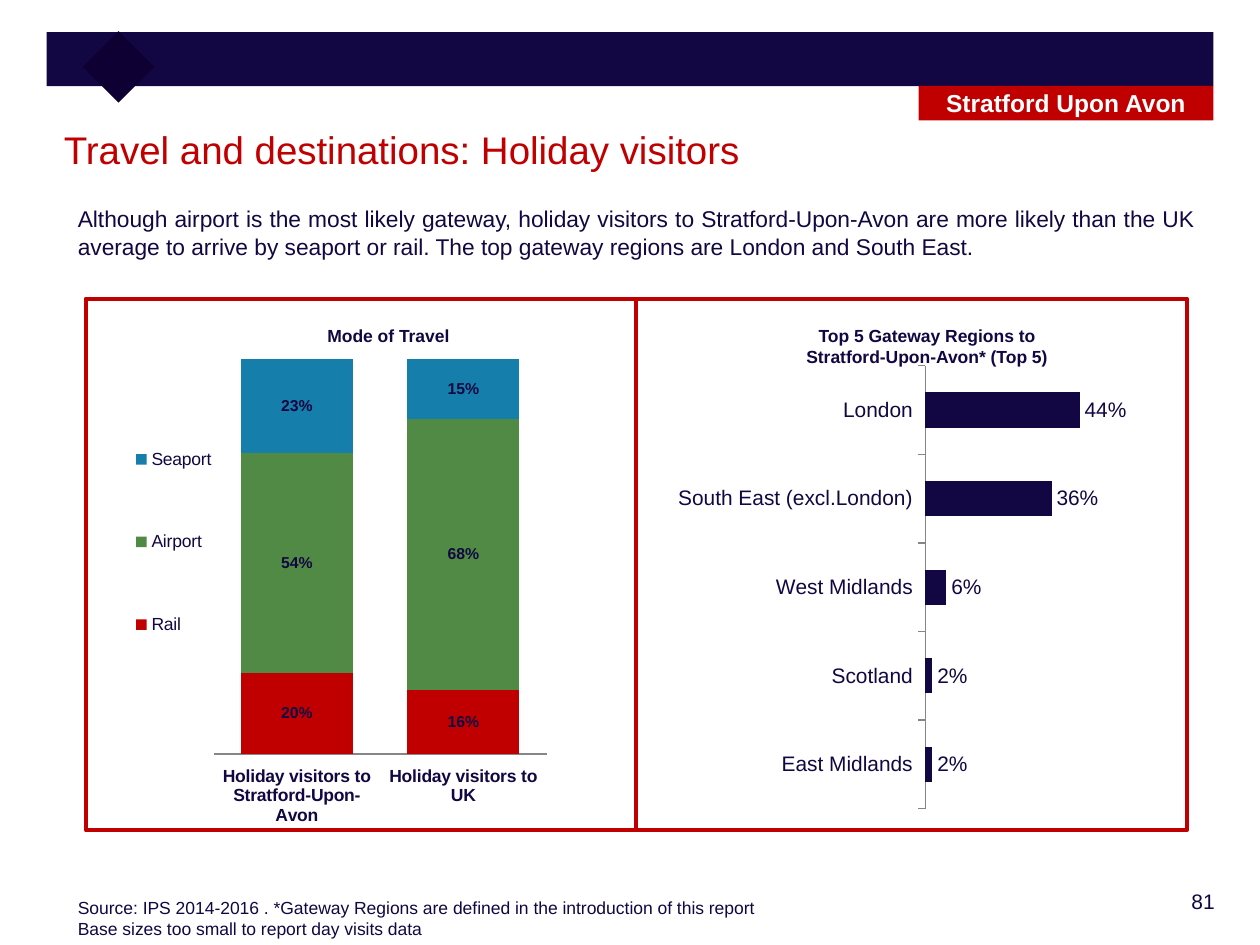
from pptx import Presentation
from pptx.chart.data import CategoryChartData
from pptx.dml.color import RGBColor
from pptx.enum.chart import XL_CHART_TYPE, XL_LEGEND_POSITION, XL_TICK_LABEL_POSITION, XL_TICK_MARK
from pptx.enum.shapes import MSO_SHAPE
from pptx.enum.text import MSO_ANCHOR, PP_ALIGN
from pptx.oxml import parse_xml
from pptx.oxml.ns import nsdecls, qn
from pptx.util import Cm, Pt

COLORS = {name: RGBColor.from_string(value) for name, value in {
    "navy": "120742", "dark": "0E0033", "red": "C00000", "green": "518A45",
    "blue": "157EAB", "gray": "868686", "white": "FFFFFF"}.items()}


def style_font(font, size, color="navy", bold=False):
    font.name, font.size, font.bold = "Arial", Pt(size), bold
    font.color.rgb = COLORS[color]


def set_layout(parent, index, x, y, w, h):
    """Place a plot area or legend by fractions of its chart."""
    for old in parent.findall(qn("c:layout")):
        parent.remove(old)
    target = '<c:layoutTarget val="inner"/>' if parent.tag == qn("c:plotArea") else ""
    parent.insert(index, parse_xml(
        f'<c:layout {nsdecls("c")}><c:manualLayout>{target}'
        '<c:xMode val="edge"/><c:yMode val="edge"/>'
        f'<c:x val="{x}"/><c:y val="{y}"/><c:w val="{w}"/><c:h val="{h}"/>'
        '</c:manualLayout></c:layout>'))


prs = Presentation()
prs.slide_width, prs.slide_height = Cm(25.4), Cm(19.05)
s = prs.slides.add_slide(prs.slide_layouts[6])

# Header band, diamond and place tag
for x, y, w, h, color, angle in [
        (0.94, 0.65, 23.52, 1.09, "navy", 0),
        (1.88, 0.84, 1.02, 1.02, "dark", 45),
        (18.52, 1.73, 5.94, 0.7, "red", 0)]:
    sp = s.shapes.add_shape(MSO_SHAPE.RECTANGLE, Cm(x), Cm(y), Cm(w), Cm(h))
    sp.shadow.inherit = False
    sp.fill.solid()
    sp.fill.fore_color.rgb = COLORS[color]
    sp.line.fill.background()
    sp.rotation = angle
tf = sp.text_frame
tf.vertical_anchor = MSO_ANCHOR.MIDDLE
p = tf.paragraphs[0]
p.text = "Stratford Upon Avon"
p.alignment = PP_ALIGN.CENTER
style_font(p.font, 14, "white", True)

# Title, body, chart headings, source and page number
left, center, right, justify = PP_ALIGN.LEFT, PP_ALIGN.CENTER, PP_ALIGN.RIGHT, PP_ALIGN.JUSTIFY
for x, y, w, h, size, color, bold, align, lines in [
        (1.04, 2.41, 23.39, 1.55, 22, "red", False, left,
         ["Travel and destinations: Holiday visitors"]),
        (1.32, 4.01, 22.99, 1.88, 13, "navy", False, justify,
         ["Although airport is the most likely gateway, holiday visitors to "
          "Stratford-Upon-Avon are more likely than the UK average to arrive by "
          "seaport or rail. The top gateway regions are London and South East."]),
        (6.35, 6.43, 3.73, 0.79, 10, "navy", True, left, ["Mode of Travel"]),
        (15.88, 6.43, 5.61, 1.17, 10, "navy", True, center,
         ["Top 5 Gateway Regions to Stratford-Upon-Avon* (Top 5)"]),
        (1.32, 17.96, 23.06, 1.09, 10, "navy", False, left,
         ["Source: IPS 2014-2016 . *Gateway Regions are defined in the introduction of this report",
          "Base sizes too small to report day visits data"]),
        (21.67, 17.78, 3.07, 0.91, 12, "navy", False, right, ["81"])]:
    tf = s.shapes.add_textbox(Cm(x), Cm(y), Cm(w), Cm(h)).text_frame
    tf.word_wrap = True
    for i, line in enumerate(lines):
        p = tf.paragraphs[0] if i == 0 else tf.add_paragraph()
        p.text = line
        p.alignment = align
        style_font(p.font, size, color, bold)

# Chart data
travel = CategoryChartData(number_format="0%")
travel.categories = ["Holiday visitors to Stratford-Upon-Avon", "Holiday visitors to UK"]
travel.add_series("Rail", (0.2, 0.16))
travel.add_series("Airport", (0.54, 0.68))
travel.add_series("Seaport", (0.23, 0.15))

gateways = CategoryChartData(number_format="0%")
gateways.categories = ["London", "South East (excl.London)", "West Midlands",
                       "Scotland", "East Midlands"]
gateways.add_series("Series 1", (0.44, 0.36, 0.06, 0.02, 0.02))

# Charts
charts = []
for kind, data, box, plot_box, gap, overlap, top, size, label_size, bold, tick, fills in [
        (XL_CHART_TYPE.COLUMN_STACKED_100, travel, (2.11, 6.68, 9.3, 10.11),
         (0.236, 0.056, 0.722, 0.787), 49, 100, 1, 10, 9, True,
         XL_TICK_MARK.NONE, ["red", "green", "blue"]),
        (XL_CHART_TYPE.BAR_CLUSTERED, gateways, (13.67, 7.21, 9.04, 9.3),
         (0.553, 0.018, 0.393, 0.96), 150, 0, 0.5, 12, 12, False,
         XL_TICK_MARK.OUTSIDE, ["navy"])]:
    chart = s.shapes.add_chart(kind, *[Cm(v) for v in box], data).chart
    charts.append(chart)
    chart.has_title = chart.has_legend = False
    style_font(chart.font, size)
    set_layout(chart.element.find(".//" + qn("c:plotArea")), 0, *plot_box)

    axis = chart.category_axis
    axis.major_tick_mark, axis.minor_tick_mark = tick, XL_TICK_MARK.NONE
    axis.tick_label_position = XL_TICK_LABEL_POSITION.LOW
    axis.format.line.color.rgb = COLORS["gray"]
    style_font(axis.tick_labels.font, size, bold=bold)
    values = chart.value_axis
    values.visible = values.has_major_gridlines = False
    values.minimum_scale, values.maximum_scale = 0, top

    plot = chart.plots[0]
    plot.gap_width, plot.overlap, plot.vary_by_categories = gap, overlap, False
    for series, color in zip(plot.series, fills):
        series.format.fill.solid()
        series.format.fill.fore_color.rgb = COLORS[color]
        labels = series.data_labels
        labels.show_value = True
        labels.number_format, labels.number_format_is_linked = "0%", False
        style_font(labels.font, label_size, bold=bold)

# Legend on the left chart, first region on top in the right one
travel_chart, gateway_chart = charts
travel_chart.has_legend = True
legend = travel_chart.legend
legend.position = XL_LEGEND_POSITION.LEFT
legend.include_in_layout = False
style_font(legend.font, 10)
set_layout(travel_chart.element.find(".//" + qn("c:legend")), 1, 0.055, 0.11, 0.19, 0.62)
gateway_chart.category_axis.reverse_order = True

# Frames around the two charts
frame_w = 11.1
for i in range(2):
    sp = s.shapes.add_shape(MSO_SHAPE.RECTANGLE, Cm(1.73 + i * frame_w), Cm(6.02),
                            Cm(frame_w), Cm(10.72))
    sp.shadow.inherit = False
    sp.fill.background()
    sp.line.color.rgb = COLORS["red"]
    sp.line.width = Pt(2.25)

prs.save("out.pptx")
